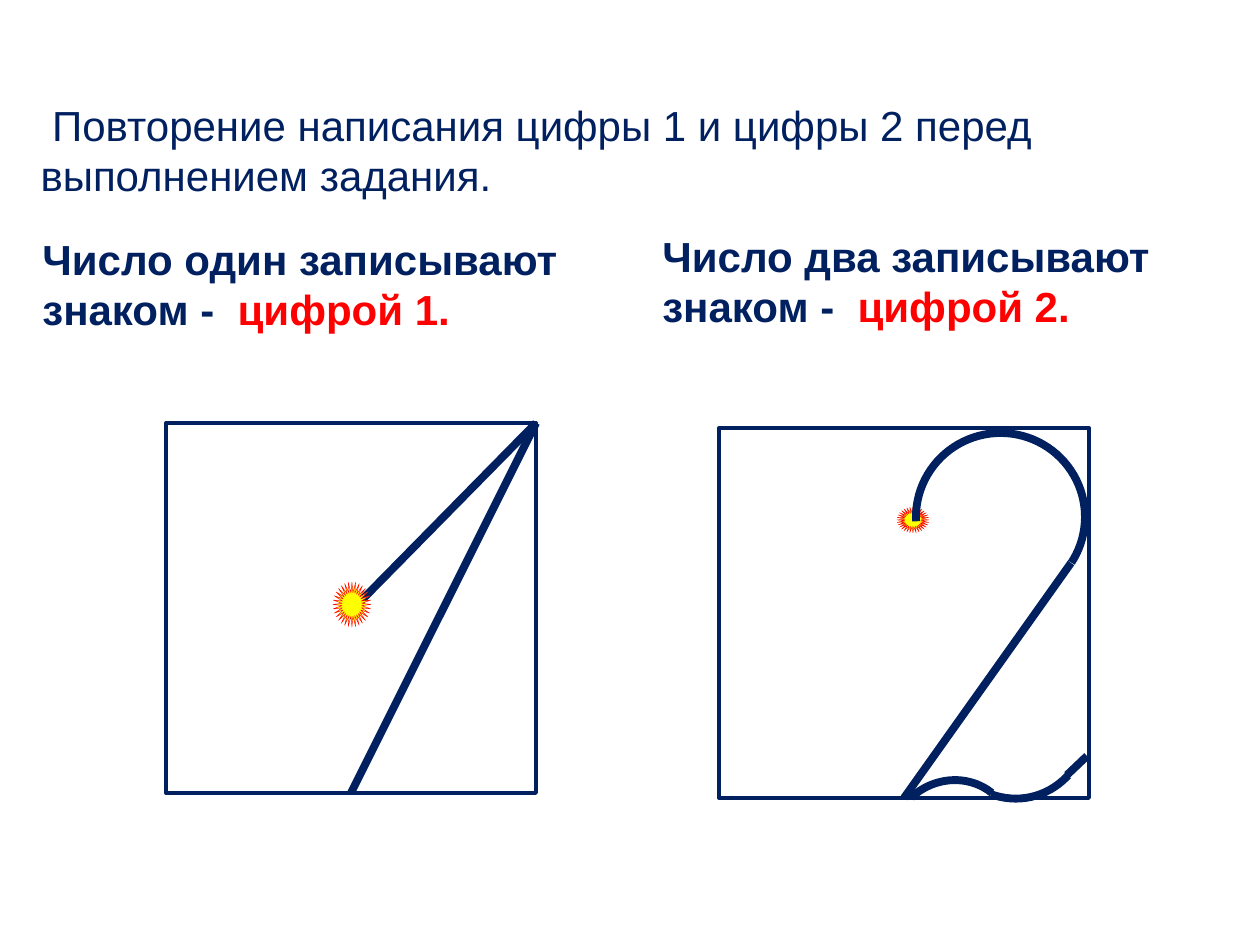
from lxml.etree import SubElement
from pptx import Presentation
from pptx.dml.color import RGBColor
from pptx.enum.shapes import MSO_CONNECTOR, MSO_SHAPE
from pptx.enum.text import MSO_ANCHOR, MSO_AUTO_SIZE, PP_ALIGN
from pptx.oxml.ns import qn
from pptx.util import Emu, Pt

NAVY = RGBColor(0x00, 0x20, 0x60)
RED = RGBColor(0xFF, 0x00, 0x00)
YELLOW = RGBColor(0xFF, 0xFF, 0x00)
FONT = "Arial"
PX_PER_INCH = 126
SIDE = 370
BOTTOM = 2


def px(n):
    return Emu(round(n * 914400 / PX_PER_INCH))


def place(sp, *box):
    sp.left, sp.top, sp.width, sp.height = map(px, box)


def add_run(p, text, size=24, bold=False, color=NAVY):
    r = p.add_run()
    r.text = text
    r.font.name = FONT
    r.font.size = Pt(size)
    r.font.bold = bold
    r.font.color.rgb = color


def format_frame(tf):
    tf.word_wrap = True
    tf.auto_size = MSO_AUTO_SIZE.NONE
    tf.vertical_anchor = MSO_ANCHOR.TOP
    tf.paragraphs[0].alignment = PP_ALIGN.LEFT
    return tf.paragraphs[0]


def add_title(slide, text, *box):
    sp = slide.shapes.title
    place(sp, *box)
    add_run(format_frame(sp.text_frame), text)


def add_caption(slide, text, digit, *box):
    sp = slide.shapes.add_textbox(*map(px, box))
    p = format_frame(sp.text_frame)
    add_run(p, text, bold=True)
    add_run(p, digit, bold=True, color=RED)


def add_outline(slide, kind, *box, width=4.5, color=NAVY, fill=None,
                rotation=0, adjustments=()):
    sp = slide.shapes.add_shape(kind, *map(px, box))
    sp.shadow.inherit = False
    sp.rotation = rotation
    for i, value in enumerate(adjustments):
        sp.adjustments[i] = value
    if fill is None:
        sp.fill.background()
    else:
        sp.fill.solid()
        sp.fill.fore_color.rgb = fill
    sp.line.color.rgb = color
    sp.line.width = Pt(width)
    return sp


def add_cell(slide, x, y):
    return add_outline(slide, MSO_SHAPE.RECTANGLE, x, y, SIDE, SIDE, width=2.25)


def add_start_mark(slide, *box):
    add_outline(slide, MSO_SHAPE.STAR_32_POINT, *box, width=0.25, color=RED,
                fill=YELLOW, adjustments=[0.26])


def add_arc(slide, *box, rotation, start, end):
    """Draw an arc between two angles in degrees."""
    # Arc adjustments are sixty-thousandths of a degree, scaled by 100000.
    add_outline(slide, MSO_SHAPE.ARC, *box, rotation=rotation,
                adjustments=[start * 0.6, end * 0.6])


def add_stroke(slide, x1, y1, x2, y2, cell=None):
    """Draw a straight stroke, joined to the bottom of cell if given."""
    line = slide.shapes.add_connector(MSO_CONNECTOR.STRAIGHT,
                                      *map(px, (x1, y1, x2, y2)))
    if cell is not None:
        line.end_connect(cell, BOTTOM)
    line.line.color.rgb = NAVY
    line.line.width = Pt(4.5)
    SubElement(line._element.spPr, qn("a:effectLst"))


def draw_one(slide):
    cell = add_cell(slide, 166, 423)
    add_stroke(slide, 355, 607, 536, 423)
    add_stroke(slide, 536, 423, 351, 793, cell=cell)
    add_start_mark(slide, 333, 582, 38, 45)


def draw_two(slide):
    cell = add_cell(slide, 719, 428)
    add_start_mark(slide, 897, 507, 32, 26)
    add_arc(slide, 916, 433, 169, 168, rotation=356.5, start=180.6, end=36.31)
    add_stroke(slide, 1071, 563, 904, 798, cell=cell)
    add_arc(slide, 934, 624, 156, 175, rotation=167.7, start=241.1, end=296.67)
    add_arc(slide, 891, 781, 122, 115, rotation=330.4, start=254.91, end=340.88)
    add_stroke(slide, 1067, 775, 1087, 756)


def main():
    prs = Presentation()
    prs.slide_width, prs.slide_height = px(1260), px(945)
    slide = prs.slides.add_slide(prs.slide_layouts[5])
    add_title(slide, " Повторение написания цифры 1 и цифры 2 перед "
              "выполнением задания.", 28, 93, 1128, 115)
    add_caption(slide, "Число два записывают знаком -  ", "цифрой 2.",
                650, 224, 559, 115)
    add_caption(slide, "Число один записывают знаком -  ", "цифрой 1.",
                30, 227, 546, 115)
    draw_two(slide)
    draw_one(slide)
    prs.save("out.pptx")


if __name__ == "__main__":
    main()
